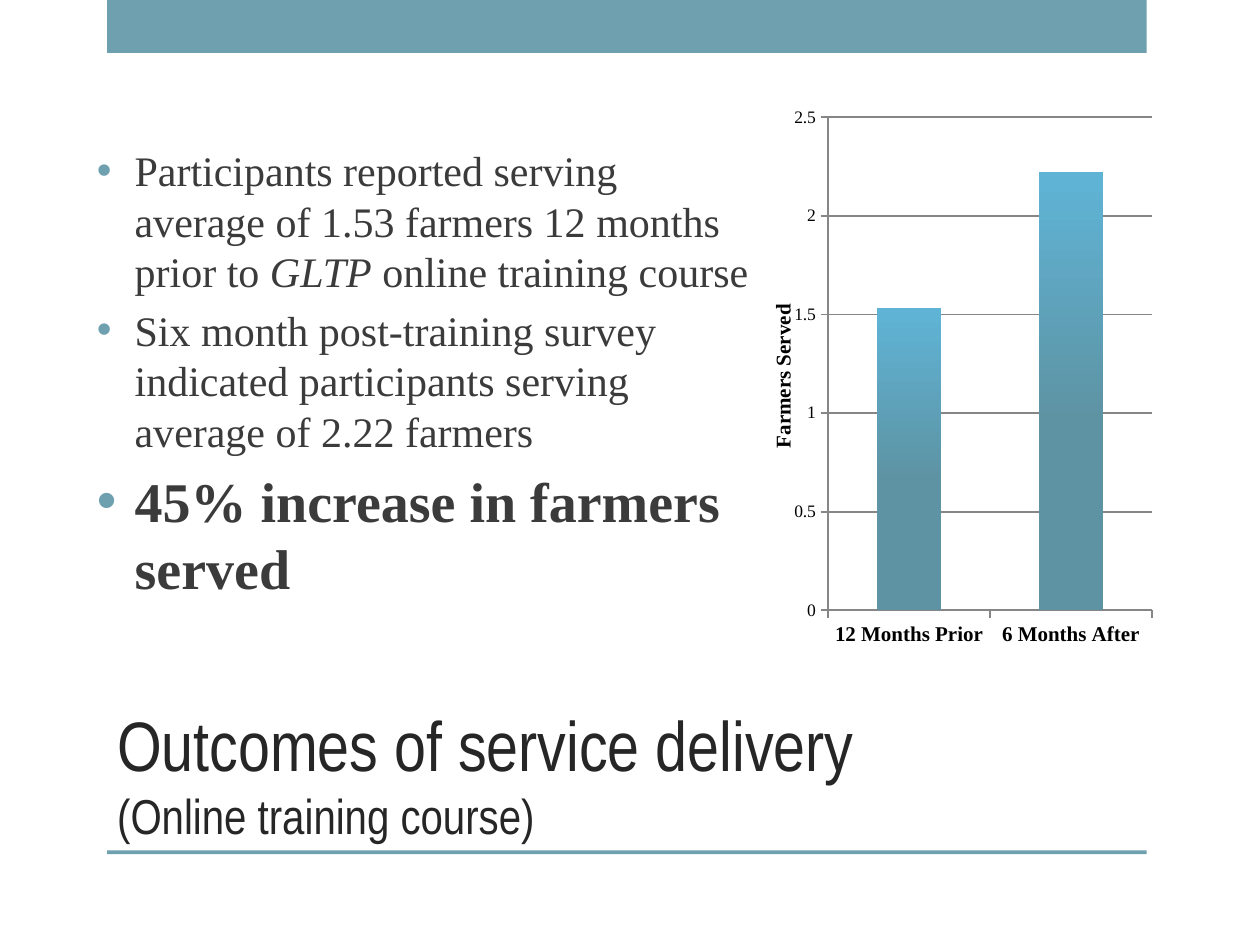
from dataclasses import dataclass

from lxml import etree
from pptx import Presentation
from pptx import util as u
from pptx.chart.data import CategoryChartData
from pptx.dml.color import RGBColor
from pptx.enum import chart as charts, shapes, text
from pptx.oxml import parse_xml
from pptx.oxml.ns import nsdecls, qn


@dataclass(frozen=True)
class Theme:
    accent: str = "6EA0B0"
    bar_top: str = "5FB4D6"
    bar_base: str = "5E93A3"
    title: str = "262626"
    body: str = "3B3B3B"
    axis: str = "868686"
    ink: str = "000000"
    heading_font: str = "Arial Narrow"
    body_font: str = "Times New Roman"
    title_size: int = 40
    subtitle_size: int = 28
    body_size: int = 24
    emphasis_size: int = 32
    label_size: int = 12
    tick_size: int = 10


@dataclass(frozen=True)
class Area:
    left: float
    top: float
    width: float
    height: float

    def lengths(self) -> list:
        return [u.Inches(n) for n in (self.left, self.top, self.width, self.height)]


@dataclass(frozen=True)
class Span:
    text: str
    italic: bool = False


@dataclass(frozen=True)
class Bullet:
    spans: tuple
    size: int
    bold: bool = False


THEME = Theme()
BANDS = (Area(0.85, 0, 8.25, 0.42), Area(0.85, 6.75, 8.25, 0.03))
TITLE_AREA = Area(0.83, 5, 7.42, 1.75)
BODY_AREA = Area(0.67, 0.75, 5.42, 4.83)
CHART_AREA = Area(6.08, 0.75, 3.52, 4.5)
PLOT_SHARES = {"x": 0.14, "y": 0.04, "w": 0.73, "h": 0.87}
BULLETS = (
    Bullet((Span("Participants reported serving average of 1.53 farmers 12 months prior to "),
            Span("GLTP", italic=True),
            Span(" online training course")), THEME.body_size),
    Bullet((Span("Six month post-training survey indicated participants serving "
                 "average of 2.22 farmers"),), THEME.body_size),
    Bullet((Span("45% increase in farmers served"),), THEME.emphasis_size, bold=True),
)


def style(font, size: int, color: str, name: str, bold: bool = False) -> None:
    font.size, font.name, font.bold = u.Pt(size), name, bold
    font.color.rgb = RGBColor.from_string(color)


def draw_band(page, area: Area) -> None:
    band = page.shapes.add_shape(shapes.MSO_SHAPE.RECTANGLE, *area.lengths())
    band.shadow.inherit = False
    band.fill.solid()
    band.fill.fore_color.rgb = RGBColor.from_string(THEME.accent)
    band.line.fill.background()


def draw_title(page) -> None:
    title = page.shapes.title
    title.left, title.top, title.width, title.height = TITLE_AREA.lengths()
    frame = title.text_frame
    frame.text = "Outcomes of service delivery\v(Online training course)"
    frame.auto_size = text.MSO_AUTO_SIZE.NONE
    frame.vertical_anchor = text.MSO_ANCHOR.BOTTOM
    para = frame.paragraphs[0]
    para.alignment = text.PP_ALIGN.LEFT
    for span, size in zip(para.runs, (THEME.title_size, THEME.subtitle_size)):
        style(span.font, size, THEME.title, THEME.heading_font)


def add_bullet_mark(para) -> None:
    props = para._p.get_or_add_pPr()
    props.set("marL", str(u.Inches(0.3)))
    props.set("indent", str(u.Inches(-0.3)))
    color = etree.SubElement(props, qn("a:buClr"))
    etree.SubElement(color, qn("a:srgbClr"), val=THEME.accent)
    etree.SubElement(props, qn("a:buFont"), typeface="Arial")
    etree.SubElement(props, qn("a:buChar"), char="•")


def draw_bullets(page) -> None:
    frame = page.shapes.add_textbox(*BODY_AREA.lengths()).text_frame
    frame.word_wrap = True
    frame.vertical_anchor = text.MSO_ANCHOR.MIDDLE
    frame.margin_bottom = u.Inches(0.46)
    for index, bullet in enumerate(BULLETS):
        para = frame.add_paragraph() if index else frame.paragraphs[0]
        para.space_before = u.Pt(bullet.size * 0.2)
        add_bullet_mark(para)
        for part in bullet.spans:
            span = para.add_run()
            span.text = part.text
            style(span.font, bullet.size, THEME.body, THEME.body_font, bullet.bold)
            span.font.italic = part.italic


def place_plot(chart) -> None:
    shares = "".join(f'<c:{key} val="{share}"/>' for key, share in PLOT_SHARES.items())
    layout = parse_xml(
        f'<c:layout {nsdecls("c")}><c:manualLayout><c:layoutTarget val="inner"/>'
        f'<c:xMode val="edge"/><c:yMode val="edge"/>{shares}</c:manualLayout></c:layout>')
    plot_area = chart._chartSpace.chart.plotArea
    for old in plot_area.findall(qn("c:layout")):
        plot_area.remove(old)
    plot_area.insert(0, layout)


def style_axis(axis, size: int, bold: bool) -> None:
    style(axis.tick_labels.font, size, THEME.ink, THEME.body_font, bold)
    axis.major_tick_mark = charts.XL_TICK_MARK.OUTSIDE
    axis.minor_tick_mark = charts.XL_TICK_MARK.NONE
    lines = [axis.format.line]
    if axis.has_major_gridlines:
        lines.append(axis.major_gridlines.format.line)
    for line in lines:
        line.width = u.Pt(1)
        line.color.rgb = RGBColor.from_string(THEME.axis)


def draw_chart(page) -> None:
    data = CategoryChartData()
    data.categories = ["12 Months Prior", "6 Months After"]
    data.add_series("Series 1", (1.53, 2.22))
    chart = page.shapes.add_chart(
        charts.XL_CHART_TYPE.COLUMN_CLUSTERED, *CHART_AREA.lengths(), data).chart
    chart.has_legend = chart.has_title = False
    style(chart.font, THEME.tick_size, THEME.ink, THEME.body_font)
    place_plot(chart)

    values = chart.value_axis
    values.minimum_scale, values.maximum_scale, values.major_unit = 0, 2.5, 0.5
    values.has_major_gridlines = True
    style_axis(values, THEME.tick_size, False)
    style_axis(chart.category_axis, THEME.label_size, True)
    label = values.axis_title.text_frame
    label.text = "Farmers Served"
    style(label.paragraphs[0].runs[0].font, THEME.label_size, THEME.ink,
          THEME.body_font, True)

    plot = chart.plots[0]
    plot.gap_width = 150
    plot.vary_by_categories = False
    fill = plot.series[0].format.fill
    fill.gradient()
    fill.gradient_angle = 270
    for stop, color, share in zip(
            fill.gradient_stops, (THEME.bar_top, THEME.bar_base), (0, 0.57)):
        stop.color.rgb = RGBColor.from_string(color)
        stop.position = share


def main() -> None:
    deck = Presentation()
    deck.slide_width, deck.slide_height = u.Inches(10), u.Inches(7.5)
    page = deck.slides.add_slide(deck.slide_layouts.get_by_name("Title Only"))
    for area in BANDS:
        draw_band(page, area)
    draw_title(page)
    draw_bullets(page)
    draw_chart(page)
    deck.save("out.pptx")


if __name__ == "__main__":
    main()
